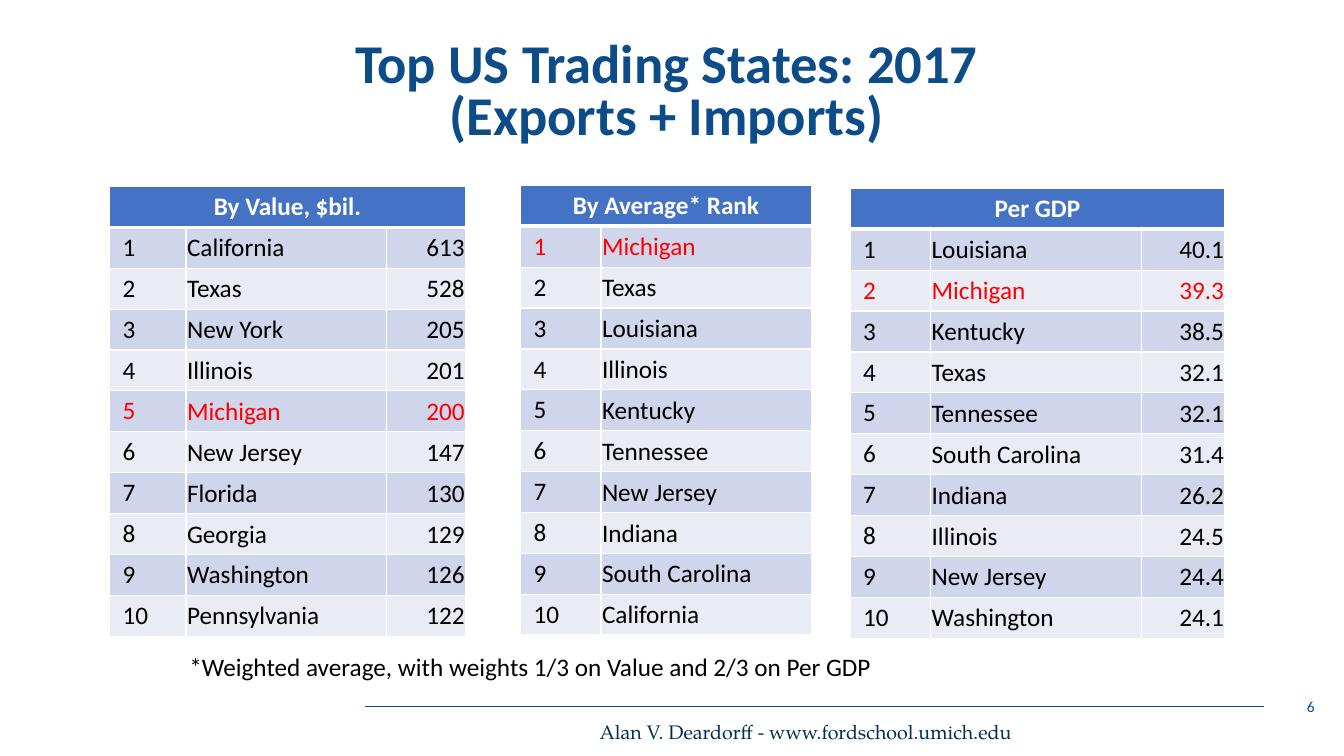
from copy import deepcopy
from dataclasses import dataclass

from lxml import etree
from pptx import Presentation
from pptx import util as u
from pptx.dml.color import RGBColor
from pptx.enum import shapes, text
from pptx.oxml.ns import qn


@dataclass(frozen=True)
class Theme:
    font: str = "Calibri"
    footer_font: str = "TeX Gyre Pagella"
    title_color: str = "0C4C88"
    footer_color: str = "002F52"
    ink: str = "000000"
    highlight: str = "FF0000"
    white: str = "FFFFFF"
    header_fill: str = "4472C4"
    bands: tuple = ("CFD5EA", "E9EBF5")
    title_size: int = 39
    body_size: int = 18
    footer_size: int = 14
    number_size: int = 11


class RankingSlide:
    def __init__(self, deck, theme):
        self.deck, self.theme = deck, theme
        self.slide = deck.slides.add_slide(deck.slide_layouts[5])

    def x(self, percent):
        return round(self.deck.slide_width * percent / 100)

    def y(self, percent):
        return round(self.deck.slide_height * percent / 100)

    def box(self, left, top, width, height):
        return self.x(left), self.y(top), self.x(width), self.y(height)

    def set_words(self, frame, words, size, color, align="LEFT", bold=False, font=None):
        frame.text = words
        paragraph = frame.paragraphs[0]
        paragraph.alignment = getattr(text.PP_ALIGN, align)
        for run in paragraph.runs:
            run.font.name = font or self.theme.font
            run.font.size = u.Pt(size)
            run.font.bold = bold
            run.font.color.rgb = RGBColor.from_string(color)
        return paragraph

    def title(self, words, place):
        heading = self.slide.shapes.title
        heading.left, heading.top, heading.width, heading.height = self.box(*place)
        frame = heading.text_frame
        frame.auto_size = text.MSO_AUTO_SIZE.NONE
        frame.vertical_anchor = text.MSO_ANCHOR.TOP
        paragraph = self.set_words(frame, words, self.theme.title_size,
                                   self.theme.title_color, "CENTER", True)
        paragraph.line_spacing = 0.8
        for line_break in paragraph._p.findall(qn("a:br")):
            line_break.append(deepcopy(paragraph.runs[0]._r.rPr))

    def label(self, words, place, size, color, align="LEFT", font=None,
              wrap=True, anchor="TOP"):
        frame = self.slide.shapes.add_textbox(*self.box(*place)).text_frame
        frame.word_wrap = wrap
        frame.vertical_anchor = getattr(text.MSO_ANCHOR, anchor)
        self.set_words(frame, words, size, color, align, font=font)

    def rule(self, start, end, level, color, width):
        line = self.slide.shapes.add_connector(
            shapes.MSO_CONNECTOR.STRAIGHT,
            self.x(start), self.y(level), self.x(end), self.y(level))
        line.line.color.rgb = RGBColor.from_string(color)
        line.line.width = u.Pt(width)
        etree.SubElement(line._element.spPr, qn("a:effectLst"))

    def borders(self, cell, top, bottom):
        properties = cell._tc.get_or_add_tcPr()
        for side, width in (("L", 1), ("R", 1), ("T", top), ("B", bottom)):
            edge = etree.SubElement(properties, qn(f"a:ln{side}"), w=str(u.Pt(width)))
            fill = etree.SubElement(edge, qn("a:solidFill"))
            etree.SubElement(fill, qn("a:srgbClr"), val=self.theme.white)

    def style_cell(self, cell, row, column, fill):
        if row == 0 or column == 0:
            margins = (0.13, 0.05, 0.13, 0.05)
        else:
            margins = (0.01, 0.01, 0.01, 0)
            cell.vertical_anchor = text.MSO_ANCHOR.MIDDLE
        (cell.margin_left, cell.margin_top,
         cell.margin_right, cell.margin_bottom) = map(u.Inches, margins)
        self.borders(cell, 3 if row == 1 else 1, 3 if row == 0 else 1)
        cell.fill.solid()
        cell.fill.fore_color.rgb = RGBColor.from_string(fill)

    def ranking(self, heading, states, left, top, widths, row_height, featured):
        theme = self.theme
        rows = len(states) + 1
        table = self.slide.shapes.add_table(
            rows, len(widths),
            *self.box(left, top, sum(widths), rows * row_height)).table
        for column, width in zip(table.columns, widths):
            column.width = self.x(width)
        for row in table.rows:
            row.height = self.y(row_height)

        for column in range(len(widths)):
            self.style_cell(table.cell(0, column), 0, column, theme.header_fill)
        table.cell(0, 0).merge(table.cell(0, len(widths) - 1))
        self.set_words(table.cell(0, 0).text_frame, heading, theme.body_size,
                       theme.white, "CENTER", True)

        for rank, entry in enumerate(states, 1):
            color = theme.highlight if entry[0] == featured else theme.ink
            for column, words in enumerate((str(rank), *entry)):
                cell = table.cell(rank, column)
                self.style_cell(cell, rank, column, theme.bands[(rank - 1) % 2])
                self.set_words(cell.text_frame, words, theme.body_size, color,
                               "RIGHT" if column == 2 else "LEFT")


BY_VALUE = [
    ("California", "613"), ("Texas", "528"), ("New York", "205"),
    ("Illinois", "201"), ("Michigan", "200"), ("New Jersey", "147"),
    ("Florida", "130"), ("Georgia", "129"), ("Washington", "126"),
    ("Pennsylvania", "122"),
]
PER_GDP = [
    ("Louisiana", "40.1"), ("Michigan", "39.3"), ("Kentucky", "38.5"),
    ("Texas", "32.1"), ("Tennessee", "32.1"), ("South Carolina", "31.4"),
    ("Indiana", "26.2"), ("Illinois", "24.5"), ("New Jersey", "24.4"),
    ("Washington", "24.1"),
]
BY_AVERAGE = [
    (state,) for state in (
        "Michigan", "Texas", "Louisiana", "Illinois", "Kentucky", "Tennessee",
        "New Jersey", "Indiana", "South Carolina", "California")
]
RANKINGS = [
    ("By Value, $bil.", BY_VALUE, 8.15, 24.67, (5.7, 14.9, 5.9)),
    ("Per GDP", PER_GDP, 63.25, 24.93, (6, 15.68, 6.22)),
    ("By Average* Rank", BY_AVERAGE, 38.72, 24.53, (6, 15.68)),
]


def main():
    deck = Presentation()
    deck.slide_width, deck.slide_height = u.Inches(13.33), u.Inches(7.5)
    theme = Theme()
    page = RankingSlide(deck, theme)

    page.rule(27.15, 94.05, 93.47, theme.title_color, 0.5)
    page.label("Alan V. Deardorff - www.fordschool.umich.edu",
               (43.5, 94.53, 32.55, 4.53), theme.footer_size, theme.footer_color,
               "RIGHT", theme.footer_font, wrap=False)
    page.label("6", (76.05, 90.8, 22.5, 5.33), theme.number_size,
               theme.title_color, "RIGHT", anchor="MIDDLE")
    page.title("Top US Trading States: 2017\v(Exports + Imports)",
               (10, 4.8, 79.2, 16.4))
    for heading, states, left, top, widths in RANKINGS:
        page.ranking(heading, states, left, top, widths, 5.41, "Michigan")
    page.label("*Weighted average, with weights 1/3 on Value and 2/3 on Per GDP",
               (13.35, 85.47, 80.5, 5.33), theme.body_size, theme.ink)
    deck.save("out.pptx")


if __name__ == "__main__":
    main()
